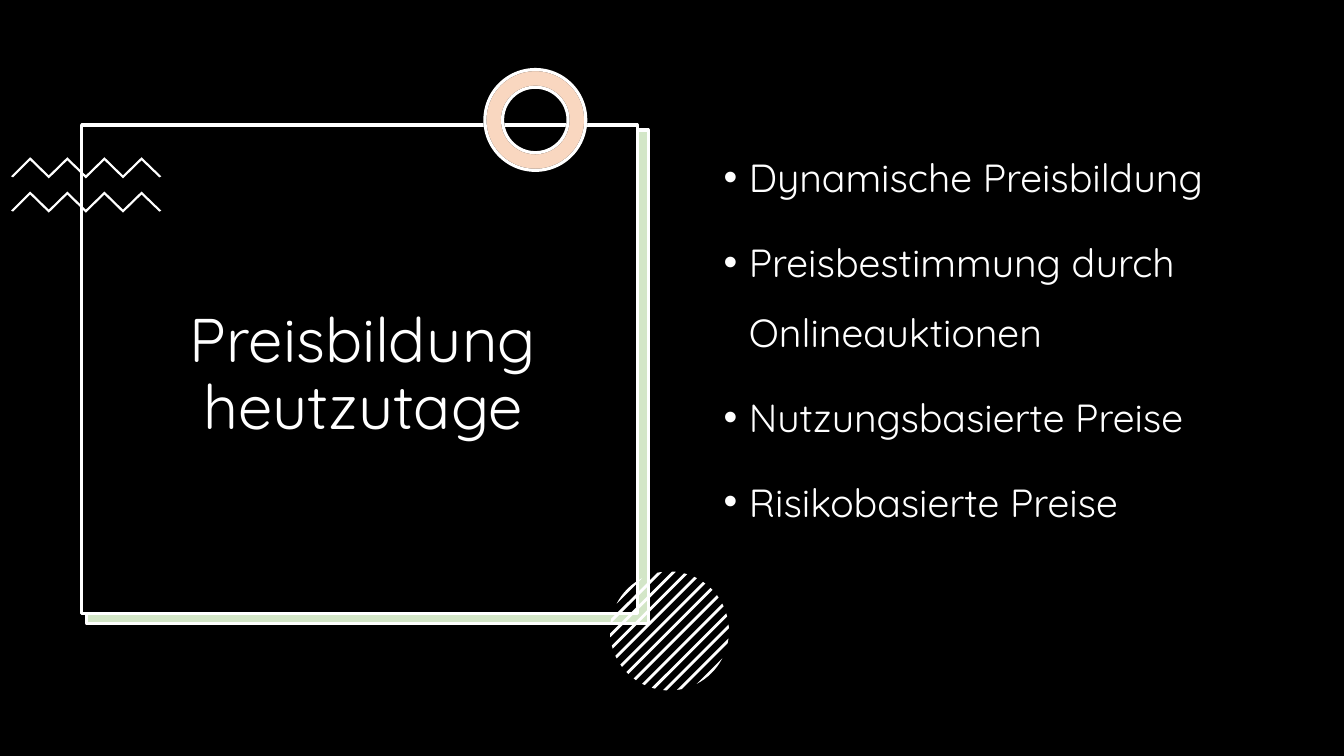
from math import acos, cos, pi, sin, sqrt

from lxml.etree import SubElement
from pptx import Presentation
from pptx.dml.color import RGBColor
from pptx.enum.shapes import MSO_SHAPE
from pptx.enum.text import MSO_ANCHOR, PP_ALIGN
from pptx.oxml.ns import qn
from pptx.util import Inches, Pt

WHITE, BLACK, GREEN, ORANGE = "FFFFFF", "000000", "70AD47", "ED7D31"


def color(value):
    return RGBColor.from_string(value)


def apply_format(target, values):
    for name, value in values.items():
        setattr(target, name, value)


class SlideBuilder:
    font_name = "Quicksand"
    line_width = Pt(2.25)

    def __init__(self, slide):
        self.slide = slide

    def paint(self, shape, fill, line=None, opacity=None):
        shape.shadow.inherit = False
        shape.fill.solid()
        shape.fill.fore_color.rgb = color(fill)
        if opacity is not None:
            fill_color = shape.fill._xPr.find(qn("a:solidFill"))[0]
            SubElement(fill_color, qn("a:alpha"), val=str(opacity * 1000))
        if line:
            shape.line.color.rgb = color(line)
            shape.line.width = self.line_width
        else:
            shape.line.fill.background()
        return shape

    def preset(self, kind, box, fill, line=None, opacity=None):
        shape = self.slide.shapes.add_shape(kind, *map(Inches, box))
        return self.paint(shape, fill, line, opacity)

    def outline(self, points, fill):
        corners = [(Inches(x), Inches(y)) for x, y in points]
        builder = self.slide.shapes.build_freeform(*corners[0])
        builder.add_line_segments(corners[1:], close=True)
        return self.paint(builder.convert_to_shape(), fill)

    def group(self, shapes):
        return self.slide.shapes.add_group_shape(shapes)

    def text(self, box, lines, size, paragraph_format, anchor, bullet=None):
        frame = self.slide.shapes.add_textbox(*map(Inches, box)).text_frame
        apply_format(frame, {"word_wrap": True, "vertical_anchor": anchor})
        for index, line in enumerate(lines):
            paragraph = frame.add_paragraph() if index else frame.paragraphs[0]
            apply_format(paragraph, paragraph_format)
            run = paragraph.add_run()
            run.text = line
            apply_format(run.font, {"name": self.font_name, "size": Pt(size)})
            run.font.color.rgb = color(WHITE)
            if bullet:
                self.add_bullet(paragraph, bullet)

    def add_bullet(self, paragraph, character):
        properties = paragraph._p.get_or_add_pPr()
        properties.set("marL", str(Inches(0.25)))
        properties.set("indent", str(Inches(-0.25)))
        SubElement(properties, qn("a:buFont"), typeface="Arial")
        SubElement(properties, qn("a:buChar"), char=character)


def zigzag_points(top):
    """Band with four peaks, running right along the top and back below."""
    left, step, height, thickness = 0.3, 0.184, 0.18, 0.03
    ridge = [(left + i * step, top + i % 2 * height) for i in range(7)]
    underside = [(x, y + thickness) for x, y in reversed(ridge)]
    return ([(0.11, top + 0.19)] + ridge + [(1.6, top + 0.19), (1.58, top + 0.2)]
            + underside + [(0.13, top + 0.2)])


def stripe_points(number, center=(6.64, 6.26), radius=0.59, steps=4):
    """Diagonal stripe cut to the circle; number 0 runs through the center."""
    pitch, half_width = 0.096, 0.014
    edges = [number * pitch - half_width, number * pitch + half_width]
    start, end = [acos(max(-1, min(1, edge / radius))) for edge in edges]
    arc = [start + (end - start) * i / steps for i in range(steps + 1)]
    turns = arc + [-turn for turn in reversed(arc)]
    return [(center[0] + radius * cos(pi / 4 + turn),
             center[1] + radius * sin(pi / 4 + turn)) for turn in turns]


def main():
    presentation = Presentation()
    apply_format(presentation, {"slide_width": Inches(13.33),
                                "slide_height": Inches(7.5)})
    slide = presentation.slides.add_slide(presentation.slide_layouts[6])
    builder = SlideBuilder(slide)

    # Background and title frame
    rectangle = MSO_SHAPE.RECTANGLE
    builder.preset(rectangle, (0, 0, 13.33, 7.5), BLACK)
    builder.preset(rectangle, (0.85, 1.3, 5.57, 4.9), WHITE)
    builder.preset(rectangle, (0.86, 1.29, 5.57, 4.9), GREEN, WHITE, 30)
    builder.preset(rectangle, (0.81, 1.24, 5.51, 4.85), BLACK, WHITE)

    # Zigzag bands
    builder.group([builder.outline(zigzag_points(top), WHITE)
                   for top in (1.56, 1.9)])

    # Ring: white base under a translucent tint
    for fill, line, opacity in ((WHITE, BLACK, None), (ORANGE, WHITE, 30)):
        ring = builder.preset(MSO_SHAPE.DONUT, (4.81, 0.69, 1, 1),
                              fill, line, opacity)
        ring.adjustments[0] = 0.175

    # Striped circle
    builder.group([builder.outline(stripe_points(number), WHITE)
                   for number in range(-6, 7)])

    # Title and bullet list
    builder.text((0.92, 1.52, 5.36, 4.42), ["Preisbildung heutzutage"], 44,
                 {"alignment": PP_ALIGN.CENTER, "line_spacing": 0.9},
                 MSO_ANCHOR.MIDDLE)
    builder.text((7.08, 1.24, 5.44, 4.76),
                 ["Dynamische Preisbildung",
                  "Preisbestimmung durch Onlineauktionen",
                  "Nutzungsbasierte Preise",
                  "Risikobasierte Preise"], 28,
                 {"alignment": PP_ALIGN.LEFT, "line_spacing": 1.5,
                  "space_before": Pt(10)},
                 MSO_ANCHOR.TOP, bullet="•")

    presentation.save("out.pptx")


if __name__ == "__main__":
    main()
